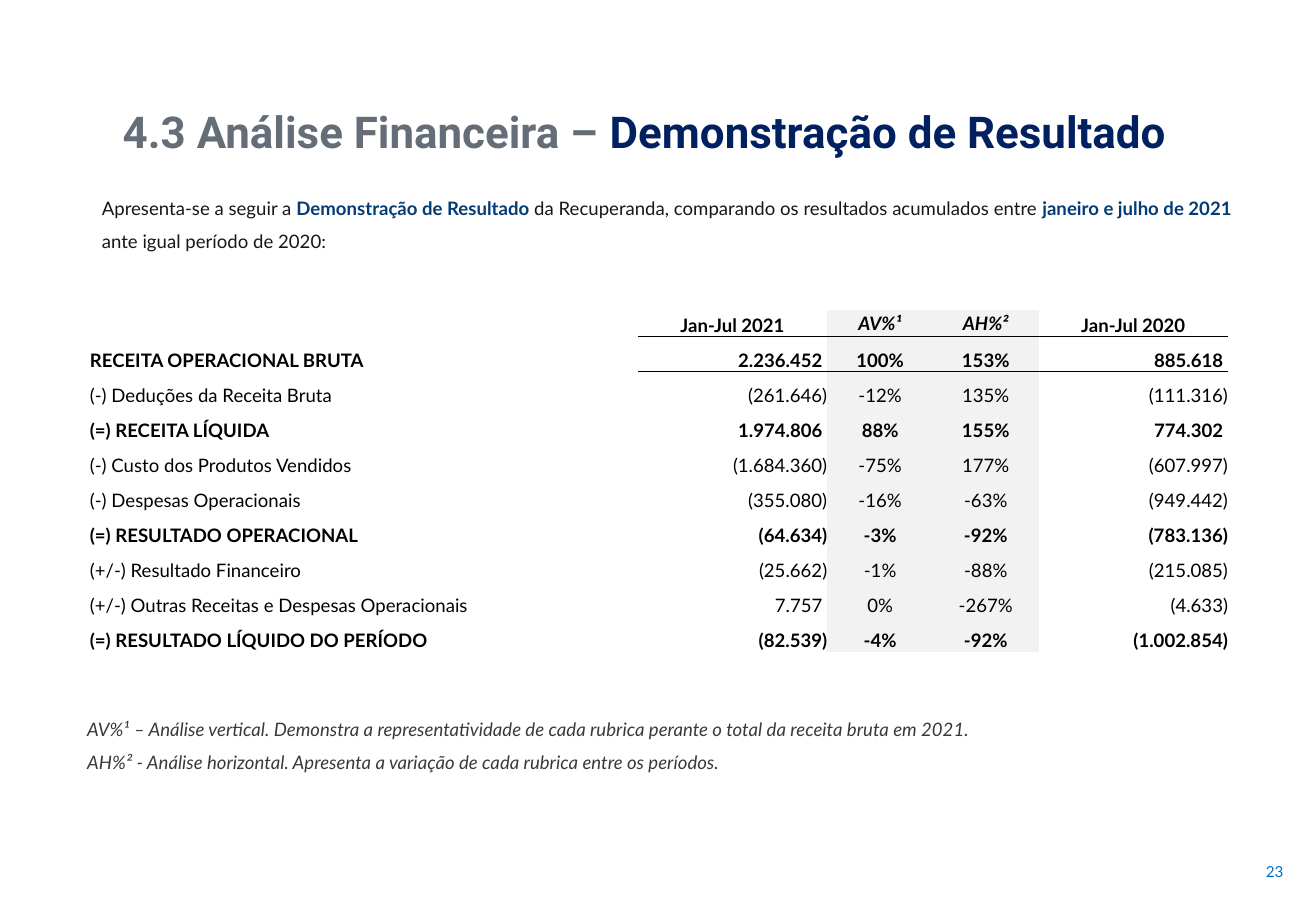
from typing import NamedTuple

from lxml.etree import SubElement
from pptx import Presentation
from pptx.dml.color import RGBColor
from pptx.enum.text import MSO_ANCHOR, MSO_AUTO_SIZE, PP_ALIGN
from pptx.oxml.ns import qn
from pptx.slide import Slide
from pptx.table import Table, _Cell
from pptx.text.text import TextFrame, _Paragraph
from pptx.util import Inches, Length, Pt

WIDE = Inches(10.83)
HIGH = Inches(7.5)
LEFT, MID, RIGHT, FULL = PP_ALIGN.LEFT, PP_ALIGN.CENTER, PP_ALIGN.RIGHT, PP_ALIGN.JUSTIFY
TOP, CENTER, BASE = MSO_ANCHOR.TOP, MSO_ANCHOR.MIDDLE, MSO_ANCHOR.BOTTOM
FIXED = MSO_AUTO_SIZE.NONE
BLACK = RGBColor(0, 0, 0)
WHITE = RGBColor(255, 255, 255)
SHADE = RGBColor(0xF2, 0xF2, 0xF2)
SLATE = RGBColor(0x65, 0x6D, 0x78)
NAVY = RGBColor(0, 0x20, 0x60)
INK = RGBColor(0x18, 0x17, 0x17)
BLUE = RGBColor(0x03, 0x3C, 0x75)
GREY = RGBColor(0x3B, 0x38, 0x38)
AZURE = RGBColor(0, 0x70, 0xC0)
NO_GRID = "{2D5ABB26-0587-4C30-8999-92F81FD0307C}"


class Box(NamedTuple):
    left: float
    top: float
    width: float
    height: float


class Span(NamedTuple):
    text: str
    color: RGBColor = BLACK
    bold: bool = False
    slant: bool = False
    size: float = 11
    font: str = "Lato"


class Block(NamedTuple):
    box: Box
    lines: list[list[Span]]
    align: PP_ALIGN
    space: float = 1
    anchor: MSO_ANCHOR = TOP


class Row(NamedTuple):
    label: str
    now: str
    share: str
    change: str
    past: str
    bold: bool = False


TITLE = Block(Box(8.4, 10.8, 86.43, 7.2), [[
    Span("4.3 Análise Financeira – ", SLATE, True, size=26, font="Roboto"),
    Span("Demonstração de Resultado", NAVY, True, size=26, font="Roboto"),
]], LEFT)
BLOCKS = [
    Block(Box(6.83, 19.73, 87.9, 8.8), [[
        Span("Apresenta-se a seguir a ", INK),
        Span("Demonstração de Resultado ", BLUE, True),
        Span("da Recuperanda, comparando os resultados acumulados entre ", INK),
        Span("janeiro e julho de 2021 ", BLUE, True),
        Span("ante igual período de 2020:", INK),
    ]], LEFT, 1.5),
    Block(Box(5.72, 76.93, 80.33, 8.4), [
        [Span("AV%¹ – Análise vertical. Demonstra a representatividade de cada rubrica "
              "perante o total da receita bruta em 2021.", GREY, slant=True)],
        [Span("AH%² - Análise horizontal. Apresenta a variação de cada rubrica "
              "entre os períodos.", GREY, slant=True)],
    ], FULL, 1.5),
    Block(Box(91.14, 92.27, 7.29, 6.67), [[Span("23", AZURE, size=9)]], RIGHT, anchor=CENTER),
]
COLS = [41.64, 14.4, 8.03, 8.03, 14.4]
ALIGNS = [LEFT, RIGHT, MID, MID, RIGHT]
SHADED = (2, 3)
HEAD = 2.93
STEP = 3.85
ROWS = [
    Row("", "Jan-Jul 2021", "AV%¹", "AH%²", "Jan-Jul 2020", True),
    Row("RECEITA OPERACIONAL BRUTA", "2.236.452", "100%", "153%", "885.618", True),
    Row("(-) Deduções da Receita Bruta", "(261.646)", "-12%", "135%", "(111.316)"),
    Row("(=) RECEITA LÍQUIDA", "1.974.806", "88%", "155%", "774.302", True),
    Row("(-) Custo dos Produtos Vendidos", "(1.684.360)", "-75%", "177%", "(607.997)"),
    Row("(-) Despesas Operacionais", "(355.080)", "-16%", "-63%", "(949.442)"),
    Row("(=) RESULTADO OPERACIONAL", "(64.634)", "-3%", "-92%", "(783.136)", True),
    Row("(+/-) Resultado Financeiro", "(25.662)", "-1%", "-88%", "(215.085)"),
    Row("(+/-) Outras Receitas e Despesas Operacionais", "7.757", "0%", "-267%", "(4.633)"),
    Row("(=) RESULTADO LÍQUIDO DO PERÍODO", "(82.539)", "-4%", "-92%", "(1.002.854)", True),
]
GRID = Box(6.83, 34, sum(COLS), HEAD + STEP * (len(ROWS) - 1))


def across(share: float) -> Length:
    return Length(int(WIDE * share / 100))


def down(share: float) -> Length:
    return Length(int(HIGH * share / 100))


def place(box: Box) -> tuple[Length, Length, Length, Length]:
    return across(box.left), down(box.top), across(box.width), down(box.height)


def add_span(para: _Paragraph, span: Span) -> None:
    run = para.add_run()
    run.text = span.text
    font = run.font
    font.name, font.size = span.font, Pt(span.size)
    font.bold, font.italic = span.bold, span.slant
    font.color.rgb = span.color


def fill_frame(frame: TextFrame, block: Block) -> None:
    frame.word_wrap = True
    frame.auto_size = FIXED
    frame.vertical_anchor = block.anchor
    for index, line in enumerate(block.lines):
        para = frame.add_paragraph() if index else frame.paragraphs[0]
        para.alignment = block.align
        para.line_spacing = block.space
        for span in line:
            add_span(para, span)


def add_rule(cell: _Cell, side: str) -> None:
    rule = SubElement(cell._tc.get_or_add_tcPr(), qn(side), w=str(Pt(0.5)))
    paint = SubElement(rule, qn("a:solidFill"))
    SubElement(paint, qn("a:srgbClr"), val=str(BLACK))


def fill_cell(table: Table, row: int, col: int) -> None:
    cell, data = table.cell(row, col), ROWS[row]
    text = data[col]
    align = ALIGNS[col] if row else MID
    cell.margin_left = cell.margin_right = cell.margin_top = cell.margin_bottom = 0
    if align == RIGHT and not text.endswith(")"):
        cell.margin_right = Inches(0.04)
    cell.vertical_anchor = CENTER if row == 0 and col in SHADED else BASE
    if col and row < 2:
        add_rule(cell, "a:lnT" if row else "a:lnB")
    cell.fill.solid()
    cell.fill.fore_color.rgb = SHADE if col in SHADED else WHITE
    para = cell.text_frame.paragraphs[0]
    para.alignment = align
    if text:
        add_span(para, Span(text, bold=data.bold, slant=row == 0 and col in SHADED))
    else:
        SubElement(para._p, qn("a:endParaRPr"), sz="1100")


def add_grid(slide: Slide) -> None:
    table = slide.shapes.add_table(len(ROWS), len(COLS), *place(GRID)).table
    table.first_row = table.horz_banding = False
    table._tbl.tblPr.find(qn("a:tableStyleId")).text = NO_GRID
    for col, width in enumerate(COLS):
        table.columns[col].width = across(width)
    for row in range(len(ROWS)):
        table.rows[row].height = down(STEP if row else HEAD)
        for col in range(len(COLS)):
            fill_cell(table, row, col)


def main() -> None:
    deck = Presentation()
    deck.slide_width, deck.slide_height = WIDE, HIGH
    slide = deck.slides.add_slide(deck.slide_layouts[5])
    title = slide.shapes.title
    title.left, title.top, title.width, title.height = place(TITLE.box)
    fill_frame(title.text_frame, TITLE)
    add_grid(slide)
    for block in BLOCKS:
        fill_frame(slide.shapes.add_textbox(*place(block.box)).text_frame, block)
    deck.save("out.pptx")


if __name__ == "__main__":
    main()
